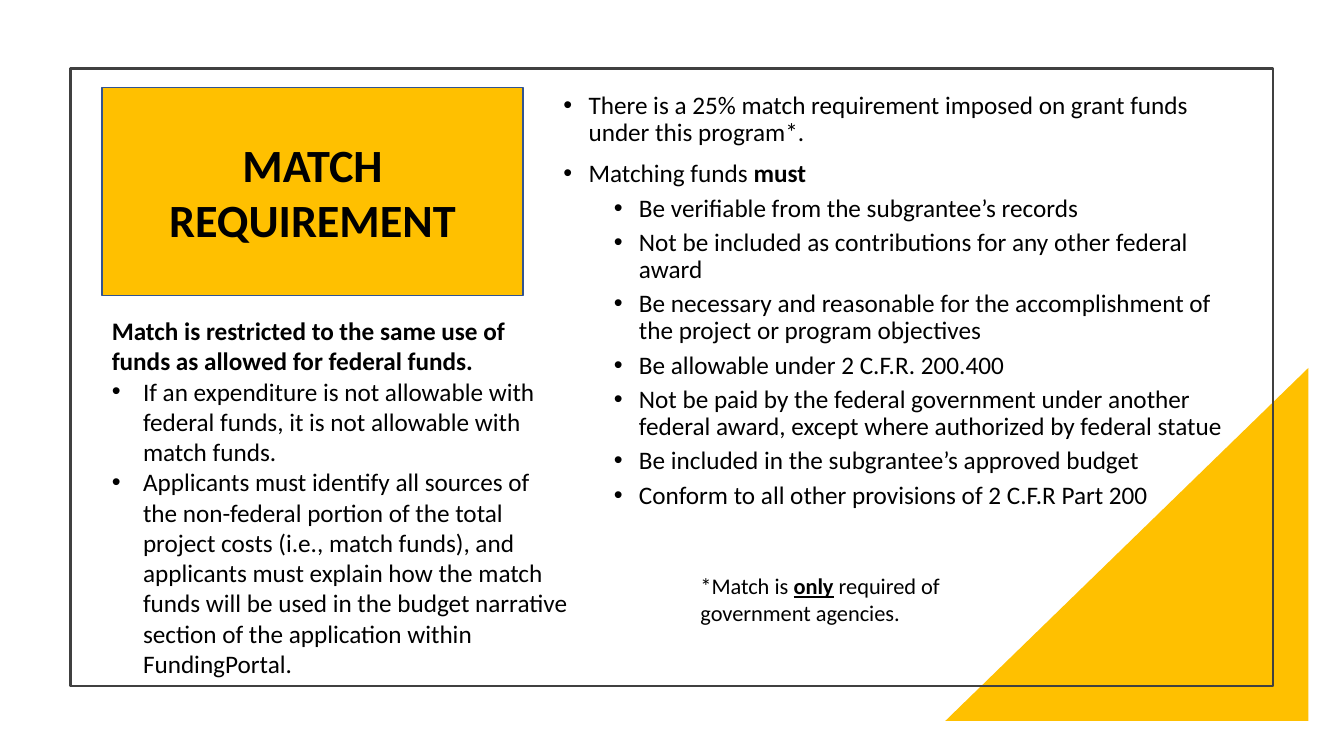
"""Build the match requirement slide."""
from lxml.etree import SubElement
from pptx import Presentation
from pptx.dml.color import RGBColor
from pptx.enum.shapes import MSO_SHAPE
from pptx.enum.text import MSO_ANCHOR, PP_ALIGN
from pptx.oxml.ns import qn
from pptx.util import Inches, Pt

WIDTH, HEIGHT = Inches(13.33), Inches(7.5)
COLORS = {"gold": "FFC000", "frame": "404040", "edge": "325491", "ink": "000000"}
FONT = "Calibri"

RULES = [
    [("There is a 25% match requirement imposed on grant funds under this program*.", "")],
    [("Matching funds ", ""), ("must", "b")],
]
CONDITIONS = [
    "Be verifiable from the subgrantee’s records",
    "Not be included as contributions for any other federal award",
    "Be necessary and reasonable for the accomplishment of the project or program objectives",
    "Be allowable under 2 C.F.R. 200.400",
    "Not be paid by the federal government under another federal award, "
    "except where authorized by federal statue",
    "Be included in the subgrantee’s approved budget",
    "Conform to all other provisions of 2 C.F.R Part 200",
]
RESTRICTION = "Match is restricted to the same use of funds as allowed for federal funds."
RESTRICTION_DETAILS = [
    "If an expenditure is not allowable with federal funds, "
    "it is not allowable with match funds.",
    "Applicants must identify all sources of the non-federal portion of the total project "
    "costs (i.e., match funds), and applicants must explain how the match funds will be used "
    "in the budget narrative section of the application within FundingPortal.",
]
FOOTNOTE = [("*Match is ", ""), ("only", "bu"), (" required of government agencies.", "")]


def place(left, top, width, height):
    """Turn percentages of the slide into lengths."""
    return [round(share * side / 100)
            for share, side in zip((left, top, width, height), (WIDTH, HEIGHT) * 2)]


def color(name):
    """Look up a named colour."""
    return RGBColor.from_string(COLORS[name])


def add_panel(slide, kind, area, fill=None, line=None, weight=1):
    """Add a flat shape with an optional fill and outline."""
    panel = slide.shapes.add_shape(kind, *place(*area))
    panel.shadow.inherit = False
    if fill:
        panel.fill.solid()
        panel.fill.fore_color.rgb = color(fill)
    else:
        panel.fill.background()
    if line:
        panel.line.color.rgb = color(line)
        panel.line.width = Pt(weight)
    else:
        panel.line.fill.background()
    return panel


def add_text_area(slide, area):
    """Add a wrapping text box and return its frame."""
    frame = slide.shapes.add_textbox(*place(*area)).text_frame
    frame.word_wrap = True
    return frame


def write(frame, parts, size=18, bold=None):
    """Write one paragraph of (text, marks) parts, with b bold and u underlined."""
    first = frame.paragraphs[0]
    paragraph = frame.add_paragraph() if first.runs else first
    paragraph.font.name = FONT
    paragraph.font.size = Pt(size)
    paragraph.font.bold = bold
    paragraph.font.color.rgb = color("ink")
    for text, marks in parts:
        run = paragraph.add_run()
        run.text = text
        if "b" in marks:
            run.font.bold = True
        if "u" in marks:
            run.font.underline = True
    return paragraph


def write_bullet(frame, parts, indent, hang, level=0, before=0, spacing=1.0):
    """Write a bulleted paragraph with a hanging indent in inches."""
    paragraph = write(frame, parts)
    paragraph.level = level
    paragraph.space_before = Pt(before)
    paragraph.line_spacing = spacing
    properties = paragraph._p.get_or_add_pPr()
    properties.set("marL", str(Inches(indent)))
    properties.set("indent", str(-Inches(hang)))
    bullet_font = SubElement(properties, qn("a:buFont"))
    bullet_font.set("typeface", "Arial")
    bullet = SubElement(properties, qn("a:buChar"))
    bullet.set("char", "•")
    for defaults in properties.findall(qn("a:defRPr")):
        properties.append(defaults)


def add_backdrop(slide):
    """Draw the corner triangle and the frame."""
    corner = add_panel(slide, MSO_SHAPE.RIGHT_TRIANGLE, (70.35, 48.67, 27, 46.67), "gold")
    corner._element.spPr.find(qn("a:xfrm")).set("flipH", "1")
    add_panel(slide, MSO_SHAPE.RECTANGLE, (5.25, 9.07, 89.48, 81.73),
              line="frame", weight=1.5)


def add_rules(slide):
    """List the match rules and the conditions under them."""
    frame = add_text_area(slide, (41.18, 11.6, 52.2, 74.13))
    for parts in RULES:
        write_bullet(frame, parts, 0.25, 0.25, before=10, spacing=0.9)
    for condition in CONDITIONS:
        write_bullet(frame, [(condition, "")], 0.75, 0.25, level=1, before=5, spacing=0.9)


def add_heading(slide):
    """Add the gold heading block."""
    heading = add_panel(slide, MSO_SHAPE.RECTANGLE, (7.58, 11.6, 31.35, 27.47),
                        "gold", "edge")
    heading.text_frame.word_wrap = True
    heading.text_frame.vertical_anchor = MSO_ANCHOR.MIDDLE
    write(heading.text_frame, [("MATCH REQUIREMENT", "")], 33, True).alignment = PP_ALIGN.CENTER


def add_restriction(slide):
    """Add the restriction and its details below the heading."""
    frame = add_text_area(slide, (7.58, 41.07, 35.48, 49.87))
    write(frame, [(RESTRICTION, "")], bold=True)
    for detail in RESTRICTION_DETAILS:
        write_bullet(frame, [(detail, "")], 0.31, 0.31)


def main():
    """Build and save the slide."""
    deck = Presentation()
    deck.slide_width, deck.slide_height = WIDTH, HEIGHT
    slide = deck.slides.add_slide(deck.slide_layouts[6])
    add_backdrop(slide)
    add_rules(slide)
    add_heading(slide)
    add_restriction(slide)
    write(add_text_area(slide, (51.38, 75.07, 27, 8.53)), FOOTNOTE, 16)
    deck.save("out.pptx")


if __name__ == "__main__":
    main()
